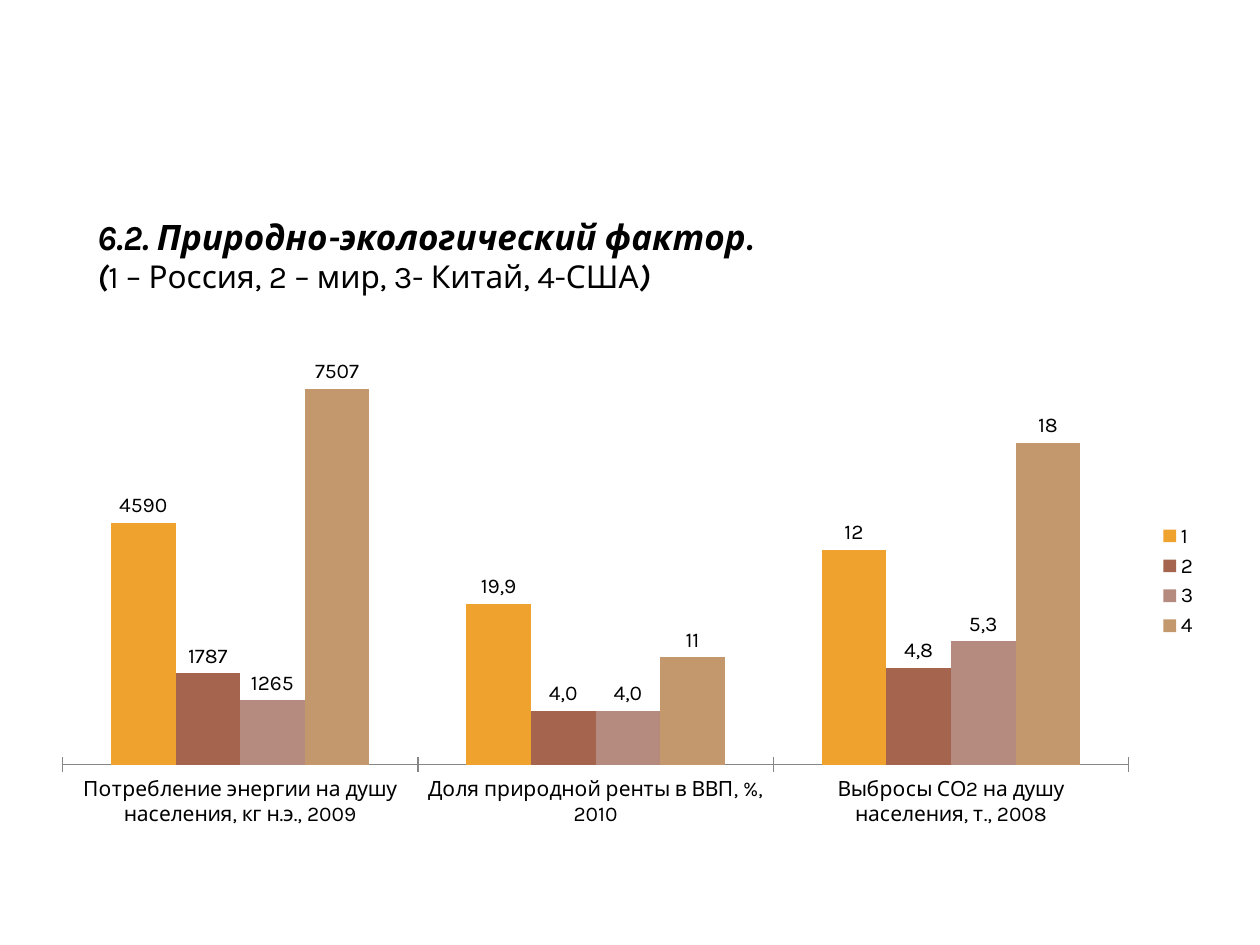
from lxml import etree
from pptx import Presentation
from pptx.chart.data import CategoryChartData
from pptx.dml.color import RGBColor
from pptx.enum.chart import XL_CHART_TYPE, XL_LABEL_POSITION, XL_LEGEND_POSITION, XL_TICK_MARK
from pptx.enum.text import MSO_ANCHOR
from pptx.util import Pt

COLUMNS = XL_CHART_TYPE.COLUMN_CLUSTERED
OUTSIDE_END = XL_LABEL_POSITION.OUTSIDE_END
LEGEND_RIGHT = XL_LEGEND_POSITION.RIGHT
TICK_CROSS = XL_TICK_MARK.CROSS
MIDDLE = MSO_ANCHOR.MIDDLE

BLACK = RGBColor(0x00, 0x00, 0x00)
GREY = RGBColor(0x86, 0x86, 0x86)
ORANGE = RGBColor(0xF0, 0xA2, 0x2E)
BROWN = RGBColor(0xA5, 0x64, 0x4E)
ROSE = RGBColor(0xB5, 0x8B, 0x80)
TAN = RGBColor(0xC3, 0x98, 0x6D)

CATEGORIES = [
    "Потребление энергии на душу населения, кг н.э., 2009",
    "Доля природной ренты в ВВП, %, 2010",
    "Выбросы СО2 на душу населения, т., 2008",
]
# Name, colour, bar heights, shown values
SERIES = [
    ("1", ORANGE, (4.5, 3, 4), ("4590", "19,9", "12")),
    ("2", BROWN, (1.7, 1, 1.8), ("1787", "4,0", "4,8")),
    ("3", ROSE, (1.2, 1, 2.3), ("1265", "4,0", "5,3")),
    ("4", TAN, (7, 2, 6), ("7507", "11", "18")),
]
# Each paragraph is a list of runs: text, size, emphasised
HEADING = [
    [("6.2. Природно-экологический фактор.", 20, True)],
    [("(", 18, True), ("1 – Россия, 2 – мир, 3- Китай, 4-США", 18, False), (")", 18, True)],
]


class SlideBuilder:
    font_name = "Karla"
    chart_size = 12

    def __init__(self, slide):
        self.slide = slide

    def style(self, font, size, bold=False, italic=False):
        font.name = self.font_name
        font.size = Pt(size)
        font.bold = bold
        font.italic = italic
        font.color.rgb = BLACK

    def text(self, left, top, width, height, paragraphs, indent):
        sp = self.slide.shapes.add_textbox(Pt(left), Pt(top), Pt(width), Pt(height))
        tf = sp.text_frame
        tf.word_wrap = True
        tf.vertical_anchor = MIDDLE
        tf.margin_left = Pt(indent)
        for i, runs in enumerate(paragraphs):
            p = tf.paragraphs[0] if i == 0 else tf.add_paragraph()
            for text, size, strong in runs:
                r = p.add_run()
                r.text = text
                self.style(r.font, size, strong, strong)

    def column_chart(self, left, top, width, height, categories, series, plot_area):
        data = CategoryChartData()
        data.categories = categories
        for name, _, values, _ in series:
            data.add_series(name, values)
        chart = self.slide.shapes.add_chart(
            COLUMNS, Pt(left), Pt(top), Pt(width), Pt(height), data).chart
        self.style(chart.font, self.chart_size)
        chart.has_title = False
        chart.has_legend = True
        chart.legend.position = LEGEND_RIGHT
        chart.legend.include_in_layout = False

        # Axes
        chart.value_axis.visible = False
        chart.value_axis.has_major_gridlines = False
        chart.value_axis.minimum_scale = 0
        chart.value_axis.maximum_scale = 8
        chart.category_axis.major_tick_mark = TICK_CROSS
        chart.category_axis.format.line.color.rgb = GREY

        # Bars and their labels
        plot = chart.plots[0]
        plot.gap_width = 150
        plot.overlap = 0
        plot.vary_by_categories = False
        for ser, (_, color, _, labels) in zip(plot.series, series):
            ser.format.fill.solid()
            ser.format.fill.fore_color.rgb = color
            ser.data_labels.show_value = True
            ser.data_labels.position = OUTSIDE_END
            for i, text in enumerate(labels):
                label = ser.points[i].data_label
                label.text_frame.text = text
                self.style(label.text_frame.paragraphs[0].runs[0].font, self.chart_size)
                label.position = OUTSIDE_END
        self.place_plot(chart, plot_area)

    def place_plot(self, chart, fractions):
        area = chart.plots[0]._element.getparent()
        ns = area.nsmap["c"]
        for old in area.findall(f"{{{ns}}}layout"):
            area.remove(old)
        layout = etree.Element(f"{{{ns}}}layout")
        manual = etree.SubElement(layout, f"{{{ns}}}manualLayout")
        settings = [("layoutTarget", "inner"), ("xMode", "edge"), ("yMode", "edge")]
        settings += zip("xywh", fractions)
        for tag, value in settings:
            etree.SubElement(manual, f"{{{ns}}}{tag}").set("val", str(value))
        area.insert(0, layout)


def main():
    prs = Presentation()
    prs.slide_width = Pt(720)
    prs.slide_height = Pt(540)
    s = SlideBuilder(prs.slides.add_slide(prs.slide_layouts[6]))

    # Heading with the key to the series
    s.text(33.84, 118.08, 438.48, 55.44, HEADING, indent=21.6)

    # Comparison by country
    s.column_chart(22.32, 185.76, 669.6, 292.32, CATEGORIES, SERIES,
                   plot_area=(0.02, 0.02, 0.91, 0.84))

    prs.save("out.pptx")


if __name__ == "__main__":
    main()
